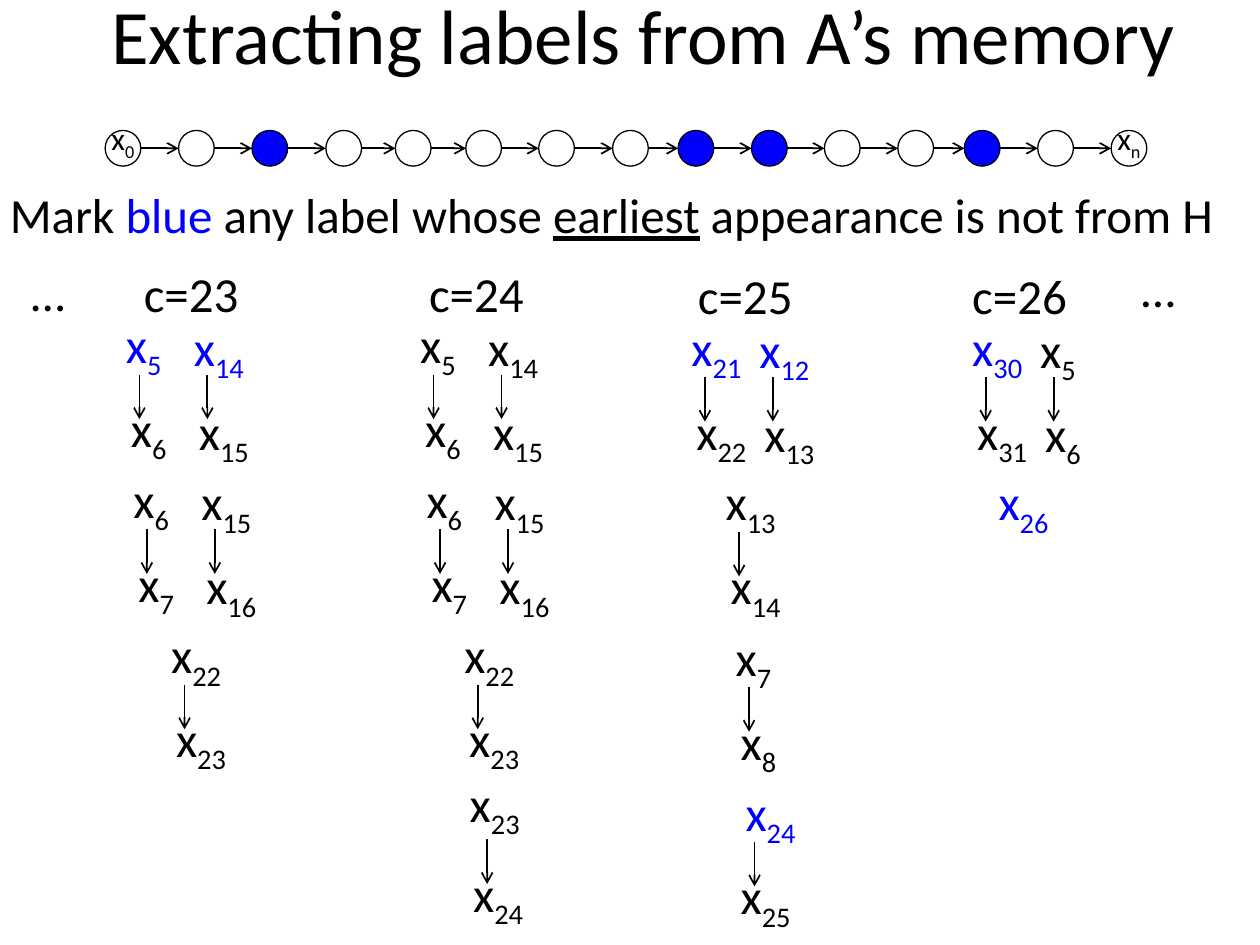
from dataclasses import dataclass
from itertools import pairwise

from lxml import etree
from pptx import Presentation
from pptx import util as u
from pptx.dml.color import RGBColor
from pptx.enum import shapes, text
from pptx.oxml.ns import qn


@dataclass(frozen=True)
class Theme:
    font: str = "Calibri"
    ink: str = "000000"
    blue: str = "0000FF"
    title_size: int = 44
    body_size: int = 28
    node_size: int = 18
    outline: float = 0.75
    arrow: float = 1


def place(*lengths):
    return [u.Cm(length) for length in lengths]


class Board:
    """Holds the theme and the current slide."""

    def __init__(self, slide, theme):
        self.slide, self.theme = slide, theme

    def fill_text(self, frame, runs, size, align=None, **frame_format):
        """Runs are (text, format) pairs; a format may hold colour, sub, underline."""
        for key, value in frame_format.items():
            setattr(frame, key, value)
        paragraph = frame.paragraphs[0]
        paragraph.alignment = align
        for words, look in runs:
            run = paragraph.add_run()
            run.text = words
            font_format = {"name": self.theme.font, "size": u.Pt(size),
                           "underline": look.get("underline")}
            for key, value in font_format.items():
                setattr(run.font, key, value)
            colour = look.get("colour", self.theme.ink)
            run.font.color.rgb = RGBColor.from_string(colour)
            if look.get("sub"):
                run.font._element.set("baseline", "-25000")

    def title(self, words, left, top, width, height):
        heading = self.slide.shapes.title
        spots = zip(("left", "top", "width", "height"), place(left, top, width, height))
        for key, value in spots:
            setattr(heading, key, value)
        self.fill_text(heading.text_frame, [(words, {})], self.theme.title_size,
                       text.PP_ALIGN.CENTER, word_wrap=True,
                       vertical_anchor=text.MSO_ANCHOR.MIDDLE)

    def note(self, runs, left, top, width, height=1.83):
        box = self.slide.shapes.add_textbox(*place(left, top, width, height))
        self.fill_text(box.text_frame, runs, self.theme.body_size, word_wrap=True)

    def label(self, number, left, top, blue=False):
        colour = self.theme.blue if blue else self.theme.ink
        runs = [("x", {"colour": colour}), (str(number), {"colour": colour, "sub": True})]
        self.note(runs, left, top, 1.9)

    def circle(self, left, top, size):
        oval = self.slide.shapes.add_shape(shapes.MSO_SHAPE.OVAL,
                                           *place(left, top, size, size))
        oval.shadow.inherit = False
        oval.fill.background()
        return oval

    def node(self, left, top, size, blue=False):
        oval = self.circle(left, top, size)
        if blue:
            oval.fill.solid()
            oval.fill.fore_color.rgb = RGBColor.from_string(self.theme.blue)
        oval.line.color.rgb = RGBColor.from_string(self.theme.ink)
        oval.line.width = u.Pt(self.theme.outline)

    def node_name(self, index, left, top, size):
        oval = self.circle(left, top, size)
        oval.line.fill.background()
        self.fill_text(oval.text_frame, [("x", {}), (index, {"sub": True})],
                       self.theme.node_size, text.PP_ALIGN.CENTER, word_wrap=False,
                       vertical_anchor=text.MSO_ANCHOR.MIDDLE,
                       margin_top=0, margin_bottom=u.Cm(0.13))

    def arrow(self, x1, y1, x2, y2):
        link = self.slide.shapes.add_connector(shapes.MSO_CONNECTOR.STRAIGHT,
                                               *place(x1, y1, x2, y2))
        link.line.color.rgb = RGBColor.from_string(self.theme.ink)
        link.line.width = u.Pt(self.theme.arrow)
        etree.SubElement(link.line._get_or_add_ln(), qn("a:tailEnd"), type="arrow")
        etree.SubElement(link._element.spPr, qn("a:effectLst"))

    def query(self, left, top, upper, lower, blues, nudge, arrow_dx, arrow_top):
        """A label with an arrow to the label below it."""
        self.label(upper, left + nudge[0], top + nudge[1], upper in blues)
        if lower is not None:
            start = arrow_top + 1.33
            self.arrow(left + arrow_dx, start, left + arrow_dx, start + 0.9)
            self.label(lower, left + 0.1, top + 1.69, lower in blues)


# Chain of labels
NODE_LEFTS = [2.12, 3.6, 5.08, 6.57, 7.97, 9.39, 10.86, 12.35,
              13.67, 15.15, 16.62, 18.1, 19.44, 20.92, 22.4]
BLUE_NODES = {2, 8, 9, 12}
NODE_TOP, NODE_SIZE, CHAIN_Y = 2.63, 0.72, 2.99

# Query columns: time, left, top, heading shift, blue labels,
# rows of (shift, [(upper, lower), ...])
COLUMNS = [
    (23, 2.29, 6.22, 0.36, {5, 14},
     [(0, [(5, 6), (14, 15)]), (0.15, [(6, 7), (15, 16)]), (0.91, [(22, 23)])]),
    (24, 8.22, 6.22, 0.18, set(),
     [(0, [(5, 6), (14, 15)]), (0.13, [(6, 7), (15, 16)]), (0.89, [(22, 23)]),
      (0.97, [(23, 24)])]),
    (25, 13.69, 6.27, 0.13, {21, 12, 24},
     [(0, [(21, 22), (12, 13)]), (0.69, [(13, 14)]), (0.89, [(7, 8)]),
      (0.89, [(24, 25)])]),
    (26, 19.35, 6.27, 0, {30, 26},
     [(0, [(30, 31), (5, 6)]), (0.53, [(26, None)])]),
]
ROW_TOPS = [0, 3.12, 6.25, 9.37]
PAIR_DX, PAIR_DY = 1.37, 0.05
LAST_ROW = 3
LAST_NUDGES = {24: (0.03, -0.13), 25: (0.2, 0)}


def main():
    deck = Presentation()
    deck.slide_width, deck.slide_height = place(25.4, 19.05)
    theme = Theme()
    board = Board(deck.slides.add_slide(deck.slide_layouts[5]), theme)

    board.title("Extracting labels from A’s memory", 0.91, -0.91, 24.13, 3.18)

    # Chain
    for index, left in enumerate(NODE_LEFTS):
        board.node(left, NODE_TOP, NODE_SIZE, index in BLUE_NODES)
    for left, following in pairwise(NODE_LEFTS):
        board.arrow(left + NODE_SIZE, CHAIN_Y, following, CHAIN_Y)
    for index, left in (("0", NODE_LEFTS[0]), ("n", NODE_LEFTS[-1])):
        board.node_name(index, left, 2.54, NODE_SIZE)

    # Marking rule
    board.note([("Mark ", {}), ("blue", {"colour": theme.blue}),
                (" any label whose ", {}), ("earliest", {"underline": True}),
                (" appearance is not from H", {})], -0.05, 3.6, 25.76)

    # Queries at each time step
    for left, top in ((0.38, 5.16), (22.76, 5.08)):
        board.note([("…", {})], left, top, 2.67)
    for time, left, top, heading_dx, blues, rows in COLUMNS:
        board.note([(f"c={time}", {})], left + heading_dx, top - 1.04, 2.67)
        for row, (shift, pairs) in enumerate(rows):
            row_top = top + ROW_TOPS[row]
            last = row == LAST_ROW
            for side, (upper, lower) in enumerate(pairs):
                board.query(left + shift + side * PAIR_DX, row_top + side * PAIR_DY,
                            upper, lower, blues,
                            nudge=LAST_NUDGES[time] if last else (0, 0),
                            arrow_dx=0.63 if last else 0.52, arrow_top=row_top)

    deck.save("out.pptx")


if __name__ == "__main__":
    main()
